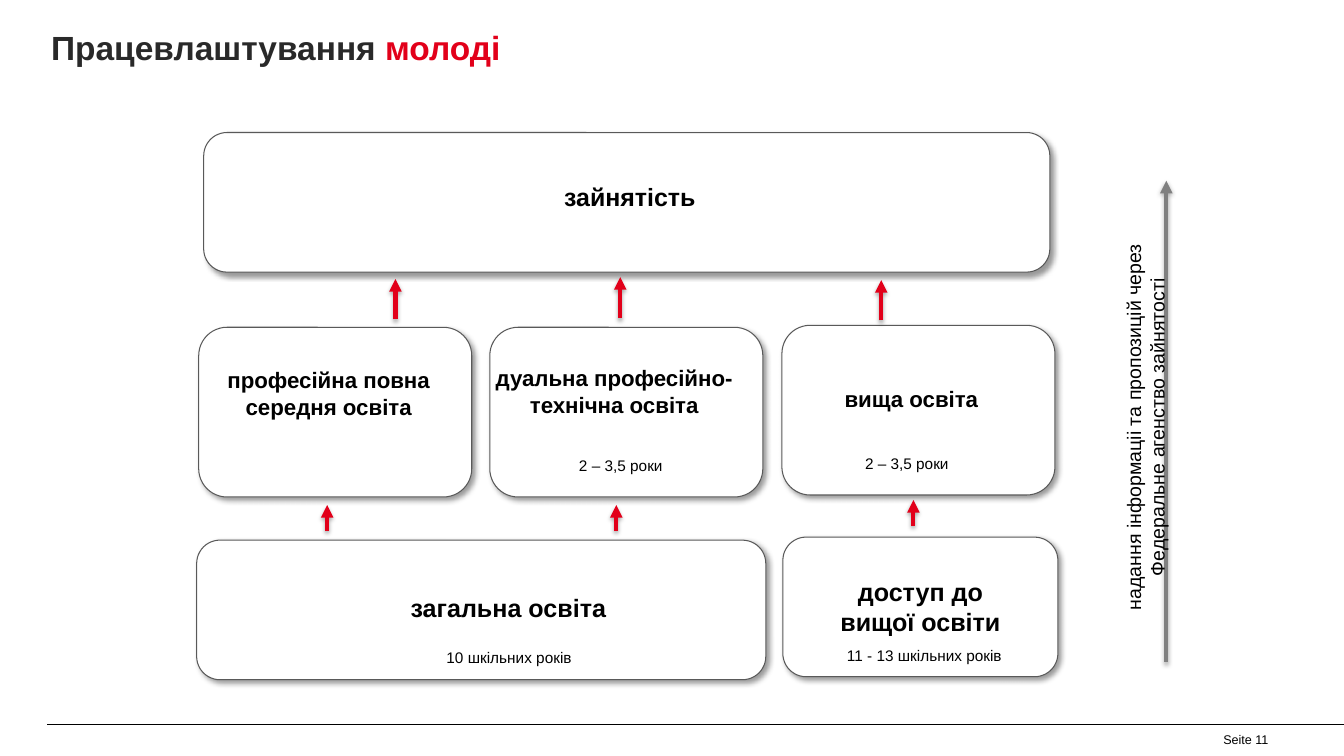
from lxml import etree
from pptx import Presentation
from pptx.dml.color import RGBColor
from pptx.enum.shapes import MSO_CONNECTOR, MSO_SHAPE
from pptx.enum.text import MSO_ANCHOR, PP_ALIGN
from pptx.oxml.ns import qn
from pptx.util import Inches, Pt

COLORS = {
    "white": "FFFFFF",
    "black": "000000",
    "title": "292929",
    "red": "E2001A",
    "gray": "808080",
    "outline": "595959",
}


class SlideBuilder:
    """Holds the style and the current slide."""

    font_name = "Arial"

    def __init__(self, presentation):
        title_only = presentation.slide_layouts[5]
        self.slide = presentation.slides.add_slide(title_only)

    def color(self, name):
        return RGBColor.from_string(COLORS[name])

    def style_font(self, font, size, color="black", bold=False):
        font.name = self.font_name
        font.size = Pt(size)
        font.bold = bold
        font.color.rgb = self.color(color)

    def add_shadow(self, shape, alpha, blur, distance, angle):
        properties = shape._element.spPr
        for old_effects in properties.findall(qn("a:effectLst")):
            properties.remove(old_effects)
        effects = etree.SubElement(properties, qn("a:effectLst"))
        shadow = etree.SubElement(
            effects, qn("a:outerShdw"), blurRad=str(Pt(blur)),
            dist=str(Pt(distance)), dir=str(angle * 60000),
            algn="ctr", rotWithShape="0")
        tint = etree.SubElement(shadow, qn("a:srgbClr"), val=COLORS["black"])
        etree.SubElement(tint, qn("a:alpha"), val=str(alpha * 1000))

    def title(self, left, top, width, height, parts):
        shape = self.slide.shapes.title
        shape.left, shape.top = Inches(left), Inches(top)
        shape.width, shape.height = Inches(width), Inches(height)
        shape.text_frame.vertical_anchor = MSO_ANCHOR.MIDDLE
        paragraph = shape.text_frame.paragraphs[0]
        paragraph.alignment = PP_ALIGN.LEFT
        for text, color in parts:
            run = paragraph.add_run()
            run.text = text
            self.style_font(run.font, 24, color, bold=True)

    def box(self, left, top, width, height):
        shape = self.slide.shapes.add_shape(
            MSO_SHAPE.ROUNDED_RECTANGLE,
            Inches(left), Inches(top), Inches(width), Inches(height))
        shape.fill.solid()
        shape.fill.fore_color.rgb = self.color("white")
        shape.line.color.rgb = self.color("outline")
        shape.line.width = Pt(0.75)
        self.add_shadow(shape, alpha=40, blur=4, distance=3, angle=45)

    def text(self, text, left, top, width, height, size, bold=False,
             alignment=PP_ALIGN.CENTER, anchor=MSO_ANCHOR.TOP, rotation=0):
        shape = self.slide.shapes.add_textbox(
            Inches(left), Inches(top), Inches(width), Inches(height))
        shape.rotation = rotation
        frame = shape.text_frame
        frame.word_wrap = True
        frame.vertical_anchor = anchor
        paragraph = frame.paragraphs[0]
        paragraph.text = text
        paragraph.alignment = alignment
        self.style_font(paragraph.font, size, bold=bold)

    def line(self, start, end, color, width):
        connector = self.slide.shapes.add_connector(
            MSO_CONNECTOR.STRAIGHT, *(Inches(value) for value in start + end))
        connector.line.color.rgb = self.color(color)
        connector.line.width = Pt(width)
        etree.SubElement(connector._element.spPr, qn("a:effectLst"))
        return connector

    def up_arrow(self, x, bottom, top, color="red"):
        connector = self.line((x, bottom), (x, top), color, 3)
        etree.SubElement(connector.line._get_or_add_ln(), qn("a:tailEnd"),
                         type="triangle")
        self.add_shadow(connector, alpha=35, blur=3.1, distance=1.8, angle=90)


def main():
    presentation = Presentation()
    presentation.slide_width = Inches(13.39)
    presentation.slide_height = Inches(7.53)
    builder = SlideBuilder(presentation)

    # Title and footer
    builder.title(0.41, 0.23, 10.09, 0.48,
                  [("Працевлаштування ", "title"), ("молоді", "red")])
    builder.line((0.47, 7.22), (13.39, 7.22), "black", 0.5)
    builder.text("Seite 11", 12.09, 7.22, 0.94, 0.3, 9,
                 alignment=PP_ALIGN.LEFT, anchor=MSO_ANCHOR.MIDDLE)

    # Boxes: general education, three paths, university access, employment
    for position in [
        (1.96, 5.38, 5.67, 1.39),
        (1.98, 3.26, 2.72, 1.69),
        (4.88, 3.26, 2.72, 1.69),
        (7.79, 3.24, 2.72, 1.69),
        (7.8, 5.35, 2.74, 1.39),
        (2.03, 1.32, 8.43, 1.39),
    ]:
        builder.box(*position)

    # Box headings
    for text, *position, size in [
        ("зайнятість", 4.29, 1.76, 3.97, 0.4, 17.9),
        ("професійна повна середня освіта", 1.83, 3.6, 2.89, 0.64, 16),
        ("дуальна професійно-технічна освіта", 4.78, 3.58, 2.68, 0.64, 16),
        ("вища освіта", 7.99, 3.79, 2.18, 0.37, 16),
        ("загальна освіта", 3.26, 5.85, 3.61, 0.4, 18),
        ("доступ до вищої освіти", 8.11, 5.69, 2.12, 0.71, 18),
    ]:
        builder.text(text, *position, size, bold=True)

    # Durations
    for text, left, top, width in [
        ("2 – 3,5 роки", 5.67, 4.49, 1.12),
        ("2 – 3,5 роки", 8.52, 4.47, 1.34),
        ("10 шкільних років", 4.35, 6.41, 1.86),
        ("11 - 13 шкільних років", 8.34, 6.39, 1.86),
    ]:
        builder.text(text, left, top, width, 0.29, 11,
                     alignment=PP_ALIGN.LEFT)

    # Arrows between the levels
    for x, bottom, top in [
        (3.26, 5.29, 5.03), (6.14, 5.29, 5.03), (9.1, 5.24, 4.98),
        (3.94, 3.18, 2.78), (6.18, 3.17, 2.76), (8.78, 3.19, 2.79),
    ]:
        builder.up_arrow(x, bottom, top)

    # Support by the employment agency
    builder.up_arrow(11.62, 6.59, 1.8, "gray")
    builder.text("надання інформаціі та пропозицій через "
                 "Федеральне агенство зайнятості",
                 8.96, 3.97, 4.9, 0.57, 14, rotation=270)

    presentation.save("out.pptx")


if __name__ == "__main__":
    main()
